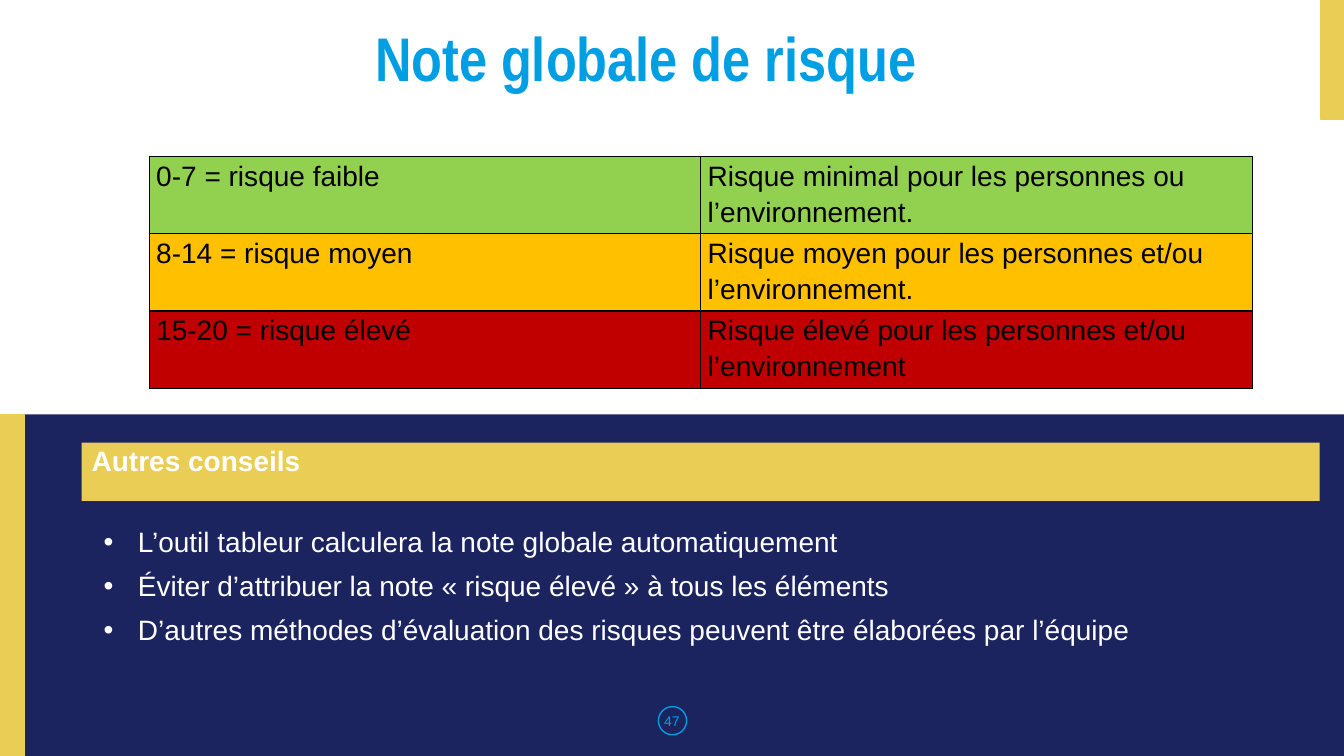
from lxml.etree import SubElement
from pptx import Presentation
from pptx.dml.color import RGBColor
from pptx.enum.shapes import MSO_SHAPE
from pptx.enum.text import MSO_ANCHOR, PP_ALIGN
from pptx.oxml.ns import qn
from pptx.util import Inches, Pt

COLORS = {
    "navy": "1C245F",
    "gold": "EACD54",
    "blue": "009EE3",
    "white": "FFFFFF",
    "black": "000000",
    "low": "92D050",
    "medium": "FFC000",
    "high": "C00000",
}
RISK_LEVELS = [
    ("low", "0-7 = risque faible",
     "Risque minimal pour les personnes ou l’environnement."),
    ("medium", "8-14 = risque moyen",
     "Risque moyen pour les personnes et/ou l’environnement."),
    ("high", "15-20 = risque élevé",
     "Risque élevé pour les personnes et/ou l’environnement"),
]
ADVICE = [
    "L’outil tableur calculera la note globale automatiquement",
    "Éviter d’attribuer la note « risque élevé » à tous les éléments",
    "D’autres méthodes d’évaluation des risques peuvent être élaborées par l’équipe",
]


def color(name):
    return RGBColor.from_string(COLORS[name])


def inches(box):
    return [Inches(length) for length in box]


def set_attributes(target, values):
    for name, value in values.items():
        setattr(target, name, value)


def write(paragraph, text, ink, size=20, bold=False, font="Arial", **layout):
    run = paragraph.add_run()
    run.text = text
    set_attributes(run.font, {"name": font, "size": Pt(size), "bold": bold})
    run.font.color.rgb = color(ink)
    set_attributes(paragraph, layout)


def add_block(slide, box, fill=None, line=None, preset=MSO_SHAPE.RECTANGLE):
    block = slide.shapes.add_shape(preset, *inches(box))
    block.shadow.inherit = False
    if fill:
        block.fill.solid()
        block.fill.fore_color.rgb = color(fill)
    else:
        block.fill.background()
    if line:
        block.line.color.rgb = color(line)
        block.line.width = Pt(1)
    else:
        block.line.fill.background()
    return block


def add_text(slide, box, anchor=MSO_ANCHOR.TOP):
    frame = slide.shapes.add_textbox(*inches(box)).text_frame
    set_attributes(frame, {"word_wrap": True, "vertical_anchor": anchor})
    return frame


def add_bullet(paragraph, ink):
    properties = paragraph._p.get_or_add_pPr()
    properties.set("marL", str(Inches(0.34)))
    properties.set("indent", str(-Inches(0.34)))
    bullet_color = SubElement(properties, qn("a:buClr"))
    SubElement(bullet_color, qn("a:srgbClr"), val=COLORS[ink])
    SubElement(properties, qn("a:buFont"), typeface="Arial")
    SubElement(properties, qn("a:buChar"), char="•")


def add_borders(cell, ink):
    properties = cell._tc.get_or_add_tcPr()
    for side in ("lnL", "lnR", "lnT", "lnB"):
        border = SubElement(properties, qn(f"a:{side}"), w=str(Pt(1)))
        fill = SubElement(border, qn("a:solidFill"))
        SubElement(fill, qn("a:srgbClr"), val=COLORS[ink])


def add_risk_table(slide):
    row_height = 0.71
    table = slide.shapes.add_table(
        len(RISK_LEVELS), 2,
        *inches((1.48, 1.55, 10.94, row_height * len(RISK_LEVELS)))).table
    set_attributes(table, {"first_row": False, "horz_banding": False})
    for row, (level, *texts) in zip(table.rows, RISK_LEVELS):
        for cell, text in zip(row.cells, texts):
            add_borders(cell, "black")
            cell.fill.solid()
            cell.fill.fore_color.rgb = color(level)
            set_attributes(cell, {
                "margin_left": Inches(0.07), "margin_right": Inches(0.07),
                "margin_top": 0, "margin_bottom": 0,
            })
            write(cell.text_frame.paragraphs[0], text, "black",
                  line_spacing=1.15)


def add_advice(slide):
    heading = add_block(slide, (0.81, 4.39, 12.28, 0.58), "gold").text_frame
    set_attributes(heading, {"word_wrap": True,
                             "vertical_anchor": MSO_ANCHOR.TOP})
    write(heading.paragraphs[0], "Autres conseils", "white", bold=True,
          alignment=PP_ALIGN.LEFT, line_spacing=0.9)

    frame = add_text(slide, (0.93, 5.19, 11.49, 1.97))
    for index, advice in enumerate(ADVICE):
        paragraph = frame.add_paragraph() if index else frame.paragraphs[0]
        write(paragraph, advice, "white", line_spacing=0.9,
              space_before=Pt(10 if index else 0))
        add_bullet(paragraph, "white")


def add_page_number(slide, number):
    add_block(slide, (6.53, 7.01, 0.28, 0.28), line="blue",
              preset=MSO_SHAPE.OVAL)
    frame = add_text(slide, (0, 6.95, 13.33, 0.4), MSO_ANCHOR.MIDDLE)
    write(frame.paragraphs[0], number, "blue", size=10,
          alignment=PP_ALIGN.CENTER)


def main():
    deck = Presentation()
    set_attributes(deck, {"slide_width": Inches(13.33),
                          "slide_height": Inches(7.5)})
    slide = deck.slides.add_slide(deck.slide_layouts[6])

    add_block(slide, (0.24, 4.11, 13.09, 3.39), "navy")
    add_block(slide, (0, 4.11, 0.24, 3.39), "gold", "gold")
    add_block(slide, (13.1, 0, 0.24, 1.18), "gold", "gold")
    add_page_number(slide, "47")
    add_advice(slide)
    add_risk_table(slide)
    title = add_text(slide, (1.11, 0.15, 10.74, 0.84))
    write(title.paragraphs[0], "Note globale de risque ", "blue", size=44,
          bold=True, font="Arial Narrow", alignment=PP_ALIGN.CENTER)

    deck.save("out.pptx")


if __name__ == "__main__":
    main()
